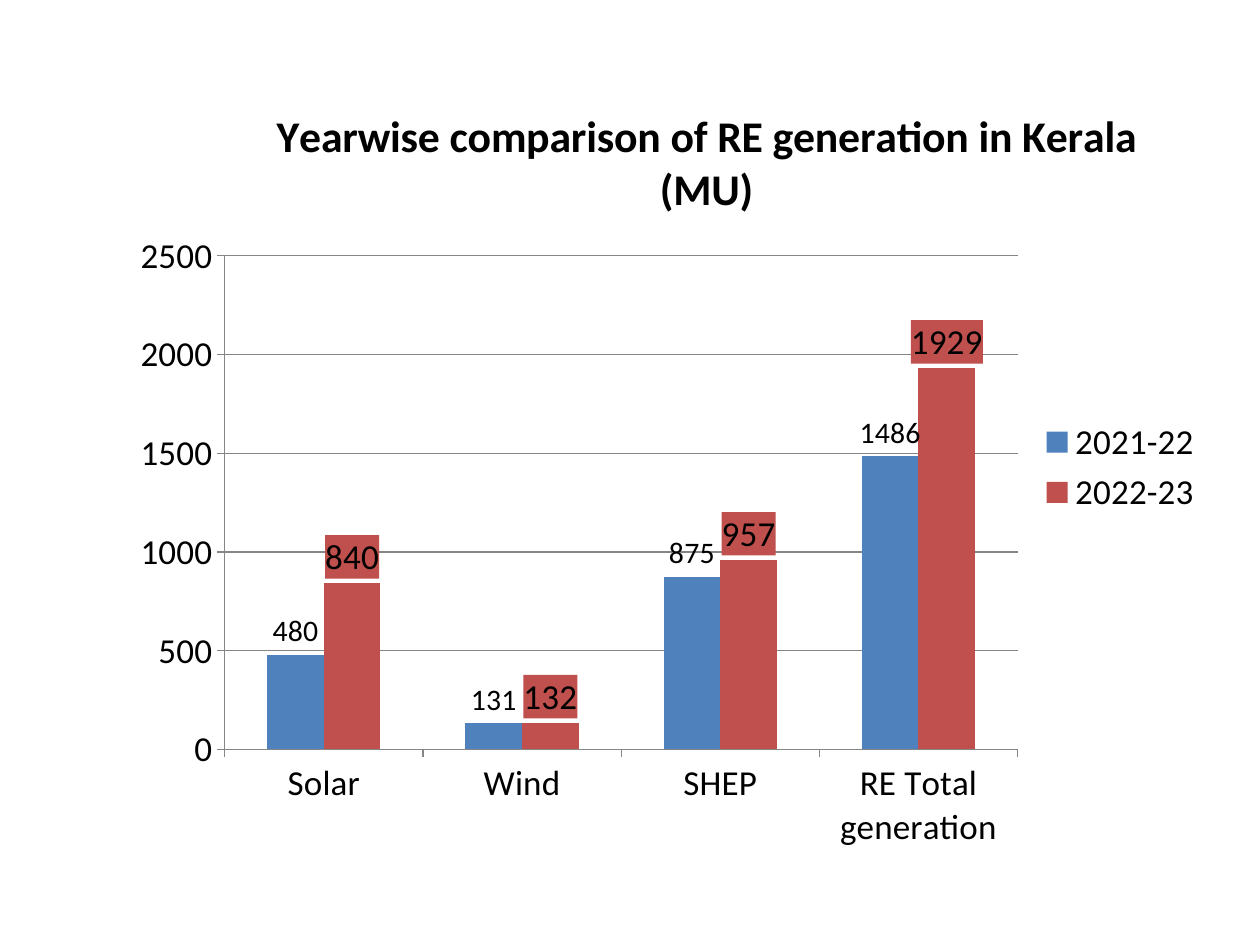
"""Build a slide with a column chart of renewable generation in Kerala."""
from dataclasses import dataclass

from lxml import etree
from pptx import Presentation
from pptx.chart.chart import Chart
from pptx.chart.data import CategoryChartData
from pptx.dml.color import RGBColor
from pptx.enum.chart import XL_CHART_TYPE, XL_LABEL_POSITION, XL_LEGEND_POSITION, XL_TICK_MARK
from pptx.oxml.ns import qn
from pptx.util import Pt

CLUSTERED = XL_CHART_TYPE.COLUMN_CLUSTERED
OUTSIDE_END = XL_LABEL_POSITION.OUTSIDE_END
LEGEND_RIGHT = XL_LEGEND_POSITION.RIGHT
TICK_OUTSIDE = XL_TICK_MARK.OUTSIDE
TICK_NONE = XL_TICK_MARK.NONE

BLACK = RGBColor(0x00, 0x00, 0x00)
GRAY = RGBColor(0x86, 0x86, 0x86)
BLUE = RGBColor(0x4F, 0x81, 0xBD)
RED = RGBColor(0xC0, 0x50, 0x4D)
FONT = "Calibri"
TEXT_SIZE = Pt(20)


@dataclass(frozen=True)
class YearSeries:
    name: str
    values: tuple[int, ...]
    color: RGBColor
    label_size: Pt
    label_filled: bool


SOURCES = ("Solar", "Wind", "SHEP", "RE Total generation")
YEARS = (
    YearSeries("2021-22", (480, 131, 875, 1486), BLUE, Pt(17), False),
    YearSeries("2022-23", (840, 132, 957, 1929), RED, Pt(20), True),
)


def place(parent: etree._Element, index: int, inner: bool = False, **fractions: float) -> None:
    """Give a chart part a manual layout in fractions of the chart."""
    for old in parent.findall(qn("c:layout")):
        parent.remove(old)
    layout = etree.Element(qn("c:layout"))
    manual = etree.SubElement(layout, qn("c:manualLayout"))
    settings = {"layoutTarget": "inner"} if inner else {}
    settings |= {"xMode": "edge", "yMode": "edge"}
    settings |= {name: str(value) for name, value in fractions.items()}
    for name, value in settings.items():
        etree.SubElement(manual, qn(f"c:{name}")).set("val", value)
    parent.insert(index, layout)


def format_title(chart: Chart, text: str) -> None:
    """Write the chart title over the plot, right of centre."""
    title = chart.chart_title
    title.text_frame.text = text
    font = title.text_frame.paragraphs[0].font
    font.name, font.size, font.bold = FONT, Pt(25), True
    font.color.rgb = BLACK
    element = title._element
    place(element, 1, x=0.14, y=0.03)
    overlay = element.find(qn("c:overlay"))
    if overlay is None:
        overlay = etree.Element(qn("c:overlay"))
        element.find(qn("c:layout")).addnext(overlay)
    overlay.set("val", "1")


def format_axes(chart: Chart) -> None:
    """Set the scale, ticks and lines of both axes."""
    for axis in (chart.category_axis, chart.value_axis):
        axis.tick_labels.font.size = TEXT_SIZE
        axis.major_tick_mark = TICK_OUTSIDE
        axis.minor_tick_mark = TICK_NONE
        axis.format.line.color.rgb = GRAY
        axis.format.line.width = Pt(0.75)
    scale = chart.value_axis
    scale.minimum_scale, scale.maximum_scale, scale.major_unit = 0, 2500, 500
    scale.has_major_gridlines = True
    scale.major_gridlines.format.line.color.rgb = GRAY
    scale.major_gridlines.format.line.width = Pt(0.75)


def format_series(chart: Chart) -> None:
    """Colour the columns and add their value labels."""
    plot = chart.plots[0]
    plot.gap_width, plot.overlap, plot.vary_by_categories = 150, 0, False
    for year, series in zip(YEARS, plot.series):
        series.format.fill.solid()
        series.format.fill.fore_color.rgb = year.color
        labels = series.data_labels
        labels.show_value = True
        labels.position = OUTSIDE_END
        labels.font.size = year.label_size
        labels.font.color.rgb = BLACK
        if year.label_filled:
            shape_format = etree.Element(qn("c:spPr"))
            fill = etree.SubElement(shape_format, qn("a:solidFill"))
            etree.SubElement(fill, qn("a:srgbClr")).set("val", str(year.color))
            labels._element.find(qn("c:txPr")).addprevious(shape_format)


def main() -> None:
    """Create the deck and save it."""
    deck = Presentation()
    deck.slide_width, deck.slide_height = Pt(720), Pt(540)
    page = deck.slides.add_slide(deck.slide_layouts[6])
    data = CategoryChartData()
    data.categories = SOURCES
    for year in YEARS:
        data.add_series(year.name, year.values)
    frame = page.shapes.add_chart(CLUSTERED, Pt(65.5), Pt(43.2), Pt(629.3), Pt(447.8), data)
    chart = frame.chart
    chart.font.name, chart.font.size = FONT, Pt(10)
    chart.font.color.rgb = BLACK
    format_title(chart, "Yearwise comparison of RE generation in Kerala (MU)")
    format_axes(chart)
    format_series(chart)
    place(chart._chartSpace.chart.plotArea, 0, inner=True, x=0.1, y=0.23, w=0.72, h=0.63)
    chart.has_legend = True
    chart.legend.position = LEGEND_RIGHT
    chart.legend.include_in_layout = False
    chart.legend.font.size = TEXT_SIZE
    deck.save("out.pptx")


if __name__ == "__main__":
    main()
